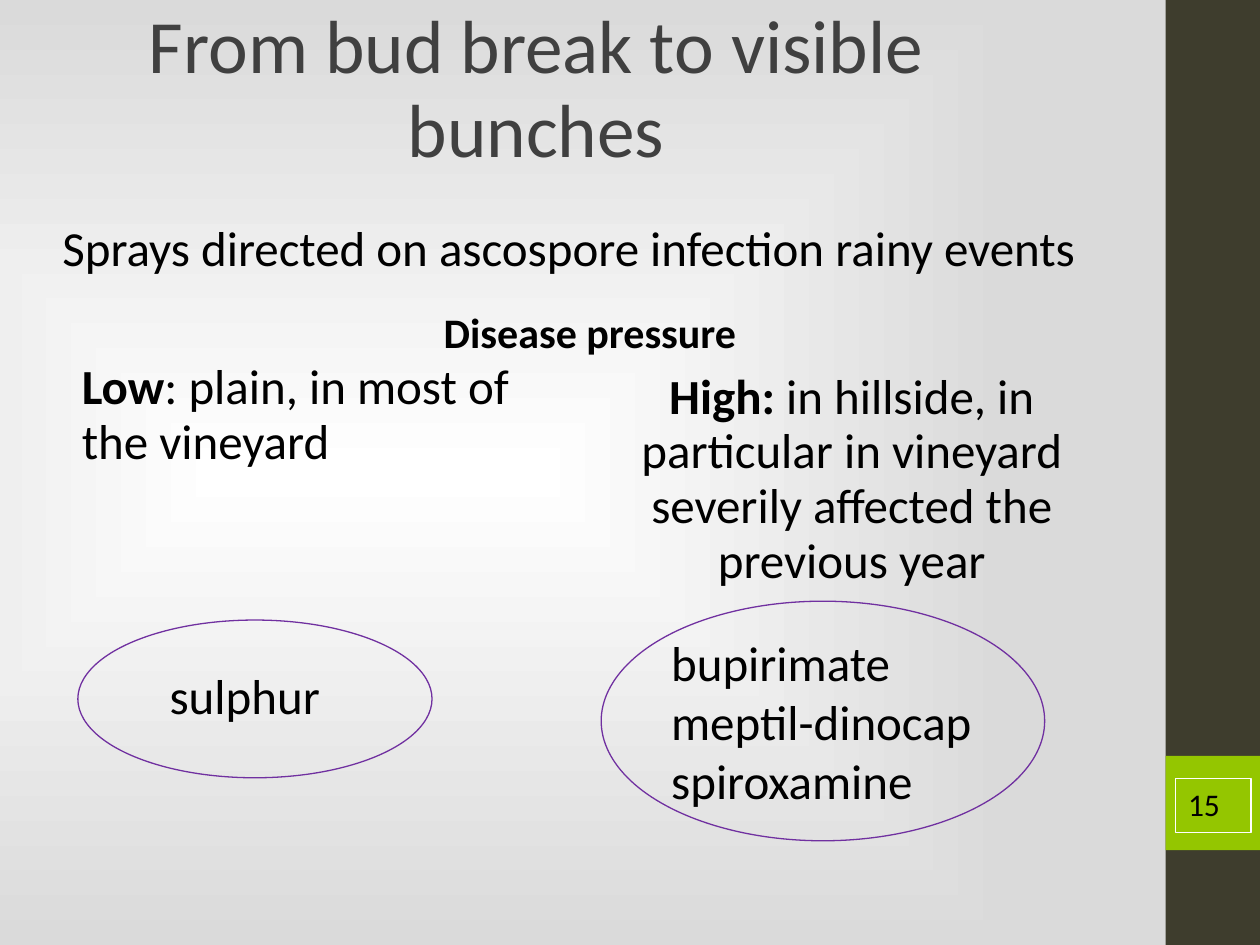
from lxml import etree
from pptx import Presentation
from pptx import util as u
from pptx.dml.color import RGBColor
from pptx.enum import shapes, text
from pptx.oxml import ns

FRAME = {
    "word_wrap": True,
    "auto_size": text.MSO_AUTO_SIZE.NONE,
    "vertical_anchor": text.MSO_ANCHOR.TOP,
    "margin_left": u.Cm(0.25),
    "margin_right": u.Cm(0.25),
    "margin_top": u.Cm(0.13),
    "margin_bottom": u.Cm(0.13),
}
PLAIN = {"alignment": text.PP_ALIGN.LEFT, "space_before": u.Pt(0), "line_spacing": 1.0}
TIGHT = PLAIN | {"line_spacing": 0.93}
CENTRED = TIGHT | {"alignment": text.PP_ALIGN.CENTER}
MIDDLE = {"vertical_anchor": text.MSO_ANCHOR.MIDDLE}


def colour(value):
    """Turn a hex string into a colour."""
    return RGBColor.from_string(value)


def apply(target, values):
    """Set each attribute of the target from a dict."""
    for name, value in values.items():
        setattr(target, name, value)


def place(shape, box):
    """Move a shape to a box of left, top, width and height in cm."""
    apply(shape, dict(zip(("left", "top", "width", "height"), map(u.Cm, box))))


def write(shape, lines, size, layout=PLAIN, ink="000000", **frame_values):
    """Fill a shape with lines, each a list of (wording, bold) spans."""
    frame = shape.text_frame
    apply(frame, FRAME | frame_values)
    for index, line in enumerate(lines):
        para = frame.add_paragraph() if index else frame.paragraphs[0]
        apply(para, layout)
        for wording, bold in line:
            span = para.add_run()
            span.text = wording
            apply(span.font, {"name": "Calibri", "size": u.Pt(size), "bold": bold})
            span.font.color.rgb = colour(ink)


def add_text(page, box, *args, **values):
    """Add a text box and write in it."""
    shape = page.shapes.add_textbox(*map(u.Cm, box))
    write(shape, *args, **values)


def add_figure(page, kind, box, fill=None, line=None):
    """Add a preset shape with an optional fill and outline."""
    shape = page.shapes.add_shape(kind, *map(u.Cm, box))
    shape.shadow.inherit = False
    for part, value in ((shape.fill, fill), (shape.line.fill, line)):
        if value:
            part.solid()
            part.fore_color.rgb = colour(value)
        else:
            part.background()
    if line:
        shape.line.width = u.Pt(0.75)
    return shape


def paint_background(page):
    """Spread a rectangular gradient out from the left of centre."""
    fill = page.background.fill
    fill.gradient()
    for stop, value in zip(fill.gradient_stops, ("FFFFFF", "DADADA")):
        stop.color.rgb = colour(value)
    lin = next(page.background._cSld.iter(ns.qn("a:lin")))
    route = etree.Element(ns.qn("a:path"), {"path": "shape"})
    etree.SubElement(route, ns.qn("a:fillToRect"), l="30000", t="50000", r="70000", b="50000")
    lin.getparent().replace(lin, route)


def add_sidebar(page, box, number):
    """Draw the dark side bar with the page number on a green square."""
    left, top, width, height = box
    rectangle = shapes.MSO_SHAPE.RECTANGLE
    square_top = top + 0.8 * height
    add_figure(page, rectangle, box, fill="3E3D2D")
    add_figure(page, rectangle, (left, square_top, width, width), fill="94C600")
    label = add_figure(page, rectangle, (left + 0.2, square_top + 0.46, 1.52, 1.09), line="FFFFFF")
    write(label, [[(number, False)]], 18)


def add_heading(page, box):
    """Place the title with the line on spray timing below it."""
    left, top, width, height = box
    title = page.shapes.title
    place(title, (left + 0.28, top, 19.63, 3.68))
    write(title, [[("From bud break to visible bunches", False)]], 43, CENTRED, "404040")
    add_text(page, (left, top + 4.37, width, height - 4.37),
             [[("Sprays directed on ascospore infection rainy events", False)]], 28, CENTRED)


def add_pressure(page, box):
    """Compare low and high disease pressure under a shared heading."""
    left, top, width, height = box
    add_text(page, (left, top, width, 1.22), [[("Disease pressure", True)]], 24, CENTRED)
    add_text(page, (left - 0.17, top + 0.99, 9.2, 3.2),
             [[("Low", True), (": plain, in most of the vineyard", False)]], 28, TIGHT)
    high = [("High: ", True),
            ("in hillside, in particular in vineyard severily affected the previous year", False)]
    add_text(page, (left + 10.14, top + 1.19, 10.92, height - 1.19), [high], 28, CENTRED)


def add_low_products(page, box):
    """Ring the product for low pressure."""
    left, top, _, _ = box
    add_text(page, (left + 1.6, top + 0.78, 4.32, 1.45), [[("sulphur", False)]], 28, **MIDDLE)
    add_figure(page, shapes.MSO_SHAPE.OVAL, box, line="7030A0")


def add_high_products(page, box):
    """Ring the list of products for high pressure."""
    left, top, _, _ = box
    body = page.placeholders[1]
    place(body, (left + 1.16, top + 0.46, 6.93, 3.9))
    products = ("bupirimate", "meptil-dinocap", "spiroxamine")
    write(body, [[(product, False)] for product in products], 28, **MIDDLE)
    for para in body.text_frame.paragraphs:
        properties = para._p.get_or_add_pPr()
        apply_indent = {"marL": "0", "indent": "0"}
        properties.attrib.update(apply_indent)
        etree.SubElement(properties, ns.qn("a:buNone"))
    add_figure(page, shapes.MSO_SHAPE.OVAL, box, line="7030A0")


def main():
    """Build and save the deck."""
    deck = Presentation()
    deck.slide_width, deck.slide_height = u.Cm(25.4), u.Cm(19.05)
    page = deck.slides.add_slide(deck.slide_layouts[1])
    paint_background(page)
    add_sidebar(page, (23.5, 0, 1.9, 19.05), "15")
    add_heading(page, (0.71, 0, 21.51, 5.74))
    add_pressure(page, (1.57, 6.15, 20.65, 5.89))
    add_low_products(page, (1.57, 12.5, 7.14, 3.18))
    add_high_products(page, (12.12, 12.12, 8.94, 4.83))
    deck.save("out.pptx")


if __name__ == "__main__":
    main()
